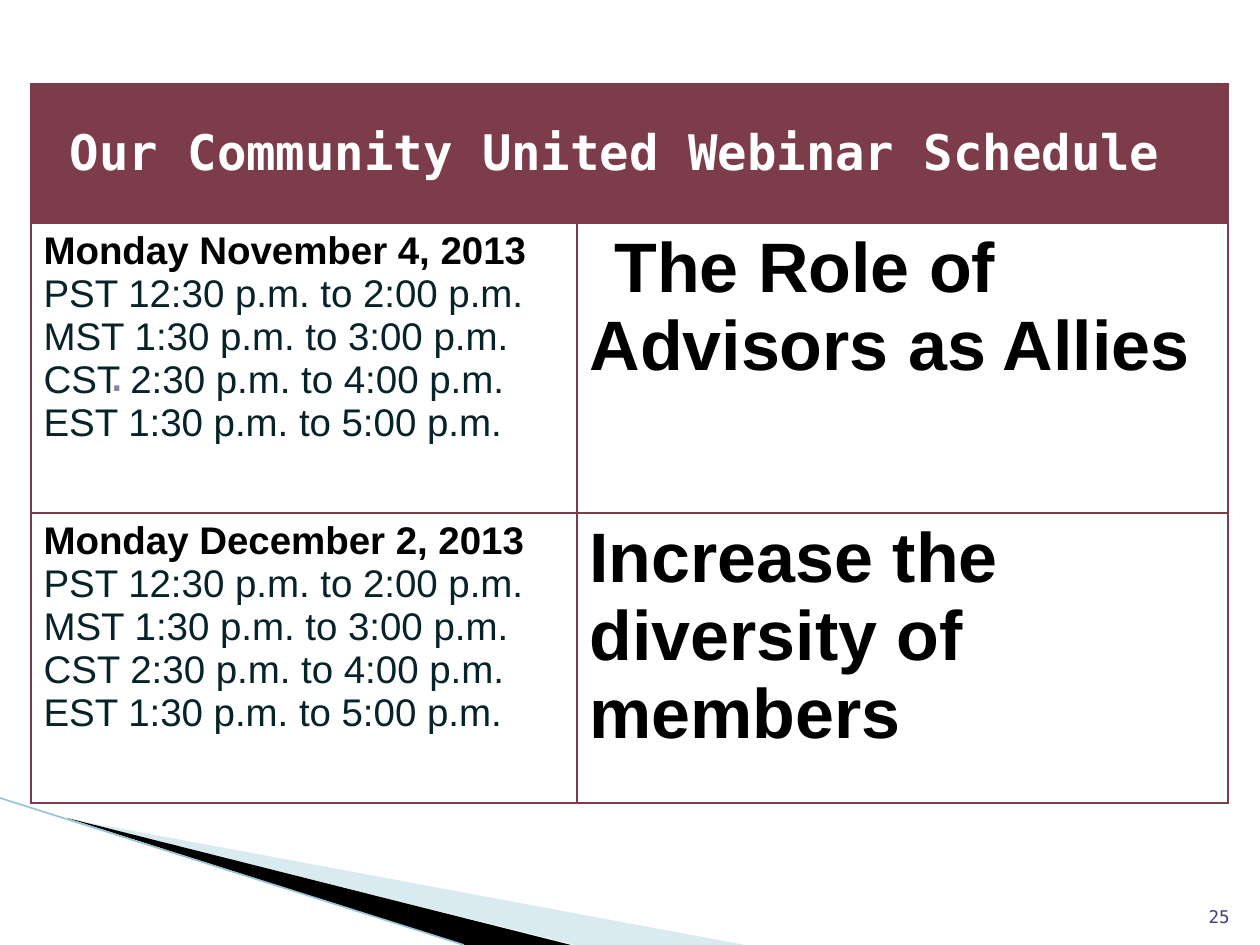
from dataclasses import dataclass

from lxml import etree
from pptx import Presentation
from pptx.dml.color import RGBColor
from pptx.enum.shapes import MSO_CONNECTOR
from pptx.enum.text import MSO_ANCHOR, PP_ALIGN
from pptx.oxml.ns import qn
from pptx.util import Pt

STRAIGHT = MSO_CONNECTOR.STRAIGHT
MIDDLE, BOTTOM = MSO_ANCHOR.MIDDLE, MSO_ANCHOR.BOTTOM
CENTER, RIGHT = PP_ALIGN.CENTER, PP_ALIGN.RIGHT
PX = 914400 / 126


@dataclass(frozen=True)
class Theme:
    mono: str = "DejaVu Sans Mono"
    sans: str = "Arial"
    maroon: str = "7D3C4A"
    white: str = "FFFFFF"
    black: str = "000000"
    hours: str = "062329"
    number: str = "404176"
    dot: str = "8383AD"
    pale_blue: str = "A0CBDC"
    edge_blue: str = "97C5D8"
    title_size: int = 28
    topic_size: int = 40
    time_size: int = 22
    dot_size: int = 18
    number_size: int = 10
    border: float = 0.75
    edge: float = 0.95


theme = Theme()


def px(*lengths):
    """Turn px lengths into EMU."""
    return [round(length * PX) for length in lengths]


def style(paragraph, size, color, face, bold=False):
    for run in paragraph.runs:
        run.font.size = Pt(size)
        run.font.color.rgb = RGBColor.from_string(color)
        run.font.name = face
        run.font.bold = bold


prs = Presentation()
prs.slide_width, prs.slide_height = px(1260, 945)
slide = prs.slides.add_slide(prs.slide_layouts[6])
shapes = slide.shapes

# Corner swoosh
swooshes = [
    ([(69, 819), (745, 945), (575, 945)], theme.pale_blue, 40),
    ([(67, 818), (571, 945), (464, 945)], theme.black, 100),
]
for points, color, opacity in swooshes:
    builder = shapes.build_freeform(*points[0], scale=PX)
    builder.add_line_segments(points[1:], close=True)
    swoosh = builder.convert_to_shape()
    swoosh.shadow.inherit = False
    swoosh.line.fill.background()
    swoosh.fill.solid()
    swoosh.fill.fore_color.rgb = RGBColor.from_string(color)
    if opacity < 100:
        tint = swoosh.fill._xPr.find(qn("a:solidFill"))[0]
        etree.SubElement(tint, qn("a:alpha"), val=str(opacity * 1000))

edge = shapes.add_connector(STRAIGHT, *px(0, 798, 464, 945))
edge.line.color.rgb = RGBColor.from_string(theme.edge_blue)
edge.line.width = Pt(theme.edge)
etree.SubElement(edge._element.spPr, qn("a:effectLst"))

# Slide number and stray dot
number = shapes.add_textbox(*px(1192, 883, 50, 50)).text_frame
number.word_wrap = True
number.vertical_anchor = BOTTOM
number.text = "25"
number.paragraphs[0].alignment = RIGHT
style(number.paragraphs[0], theme.number_size, theme.number, theme.mono)

dot = shapes.add_textbox(*px(95, 348, 1071, 57)).text_frame
dot.word_wrap = True
dot.text = "."
dot.paragraphs[0].line_spacing = 1.15
dot.paragraphs[0].space_after = Pt(10)
style(dot.paragraphs[0], theme.dot_size, theme.dot, theme.mono, bold=True)

# Webinar schedule
hours = [
    "PST 12:30 p.m. to 2:00 p.m.",
    "MST 1:30 p.m. to 3:00 p.m.",
    "CST 2:30 p.m. to 4:00 p.m.",
    "EST 1:30 p.m. to 5:00 p.m.",
]
webinars = [
    ("Monday November 4, 2013", "The Role of Advisors as Allies", 25),
    ("Monday December 2, 2013", "Increase the diversity of members", 0),
]
schedule = shapes.add_table(3, 2, *px(31, 84, 1197, 719)).table
schedule.first_row = schedule.horz_banding = False
for column, width in zip(schedule.columns, px(546, 651)):
    column.width = width
for row, height in zip(schedule.rows, px(139, 290, 290)):
    row.height = height

title = schedule.cell(0, 0)
title.merge(schedule.cell(0, 1))
title.text_frame.text = "Our Community United Webinar Schedule"
title.vertical_anchor = MIDDLE
title.margin_right = px(42)[0]
heading = title.text_frame.paragraphs[0]
heading.alignment = CENTER
style(heading, theme.title_size, theme.white, theme.mono, bold=True)

for row, (date, topic, indent) in enumerate(webinars, start=1):
    times = schedule.cell(row, 0).text_frame
    times.text = "\n".join([date] + hours)
    style(times.paragraphs[0], theme.time_size, theme.black, theme.sans, bold=True)
    for line in times.paragraphs[1:]:
        style(line, theme.time_size, theme.hours, theme.sans)

    subject = schedule.cell(row, 1).text_frame
    subject.text = topic
    paragraph = subject.paragraphs[0]
    paragraph._p.get_or_add_pPr().set("indent", str(px(indent)[0]))
    style(paragraph, theme.topic_size, theme.black, theme.sans, bold=True)

for index, cell in enumerate(schedule.iter_cells()):
    properties = cell._tc.get_or_add_tcPr()
    for side in ("a:lnL", "a:lnR", "a:lnT", "a:lnB"):
        border = etree.SubElement(properties, qn(side), w=str(Pt(theme.border)))
        fill = etree.SubElement(border, qn("a:solidFill"))
        etree.SubElement(fill, qn("a:srgbClr"), val=theme.maroon)
    if index < 2:
        cell.fill.solid()
        cell.fill.fore_color.rgb = RGBColor.from_string(theme.maroon)
    else:
        cell.fill.background()

prs.save("out.pptx")
